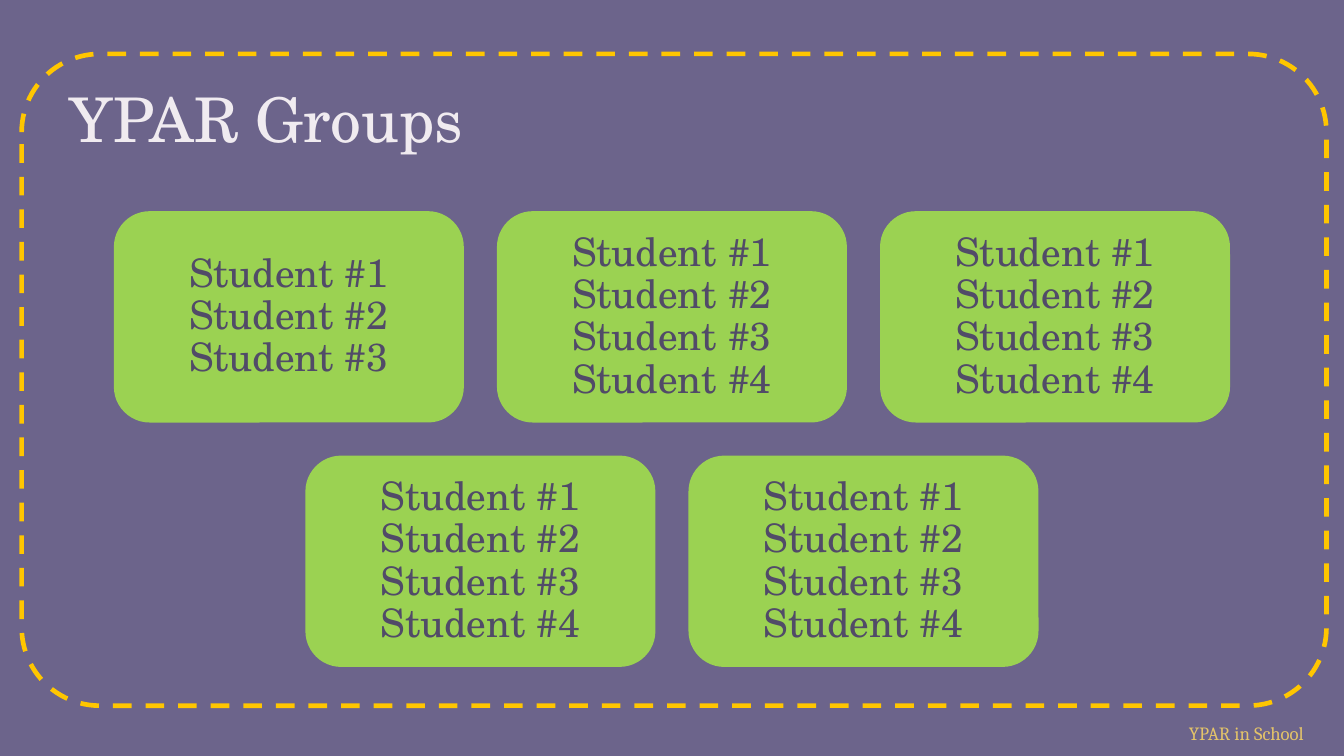
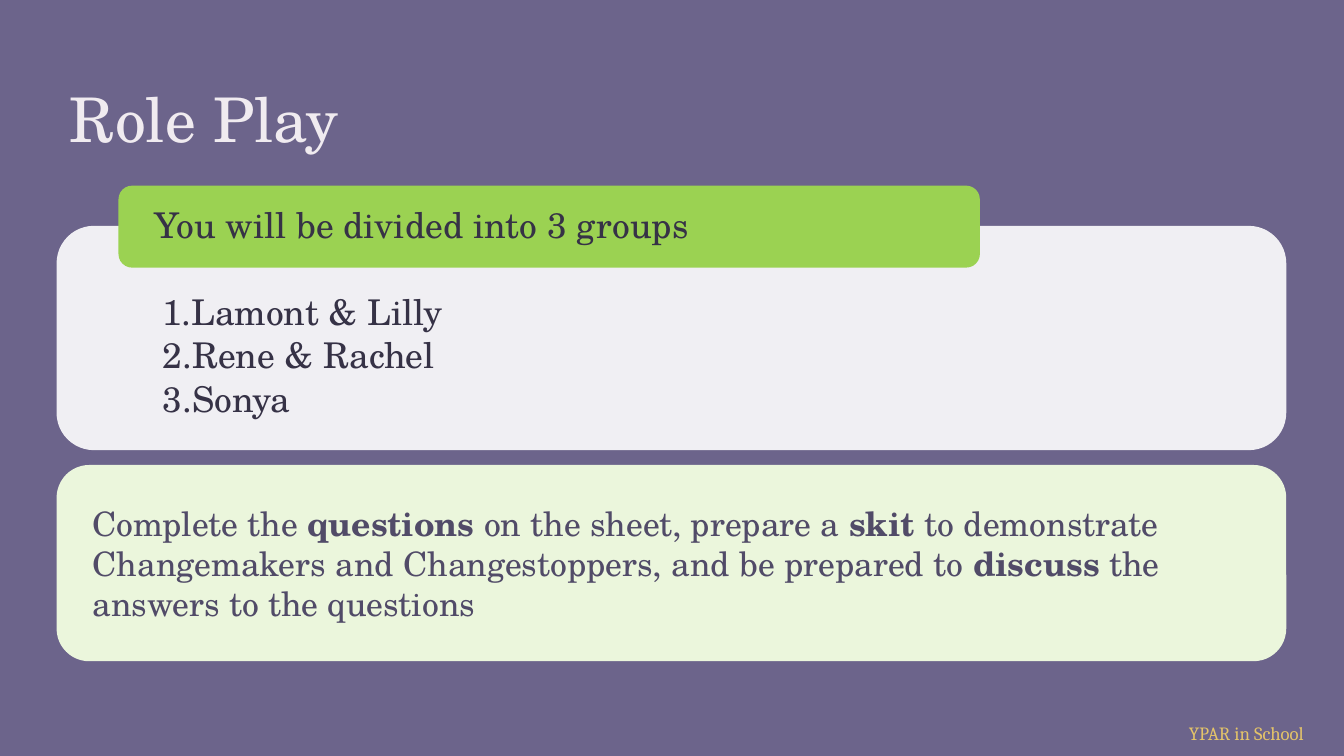
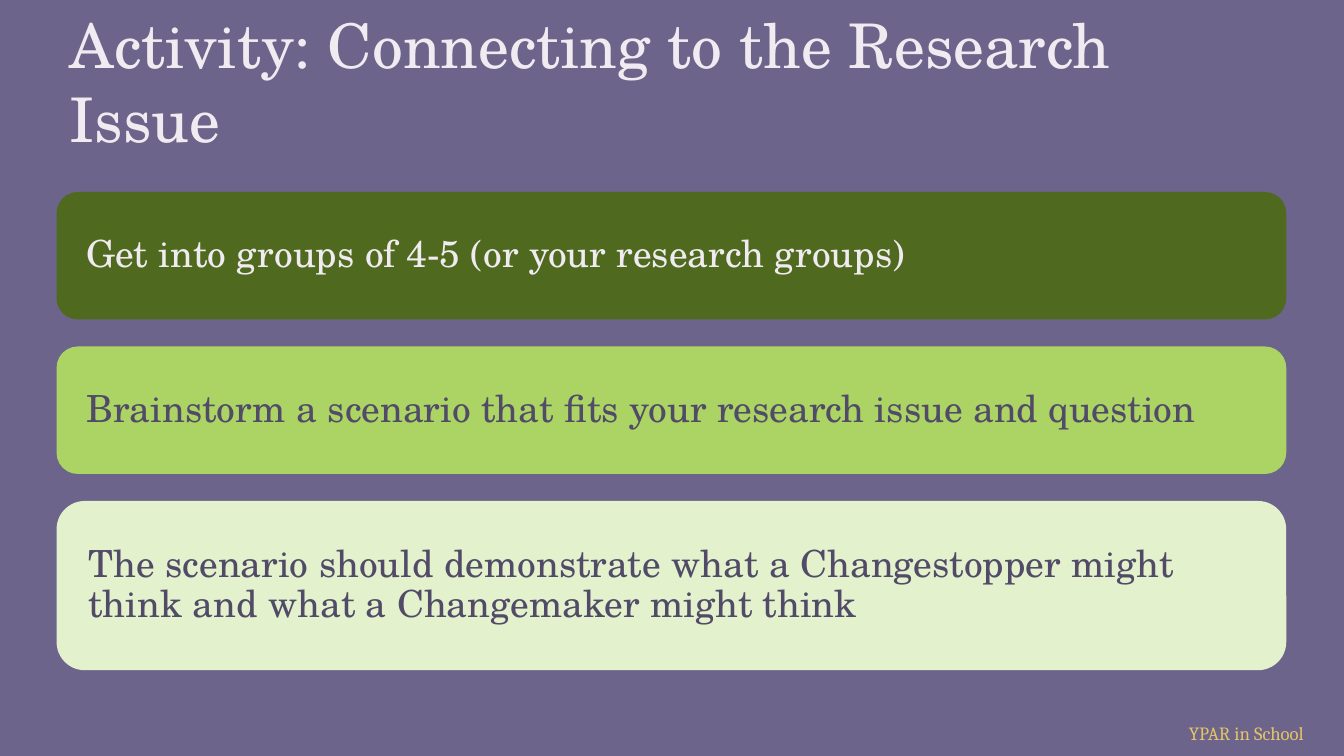
from lxml.etree import SubElement
from pptx import Presentation
from pptx.dml.color import RGBColor
from pptx.enum.dml import MSO_LINE
from pptx.enum.shapes import MSO_SHAPE
from pptx.enum.text import MSO_ANCHOR, PP_ALIGN
from pptx.oxml.ns import qn
from pptx.util import Cm, Pt

PURPLE = RGBColor(0x6C, 0x64, 0x8B)
DARK_PURPLE = RGBColor(0x51, 0x4B, 0x68)
DEEP_PURPLE = RGBColor(0x36, 0x32, 0x46)
PALE = RGBColor(0xF0, 0xEB, 0xF0)
WHITE = RGBColor(0xFF, 0xFF, 0xFF)
SAND = RGBColor(0xE4, 0xC4, 0x69)
YELLOW = RGBColor(0xFF, 0xC6, 0x00)
GREEN = RGBColor(0x9B, 0xD2, 0x52)
DARK_GREEN = RGBColor(0x4F, 0x6A, 0x1E)
MID_GREEN = RGBColor(0xAC, 0xD4, 0x65)
LIGHT_GREEN = RGBColor(0xE3, 0xF1, 0xCC)
PALE_GREEN = RGBColor(0xEB, 0xF6, 0xDC)

BODY_FONT = "TeX Gyre Schola"
FOOTER_FONT = "Cambria"

SLIDE_WIDTH, SLIDE_HEIGHT = 25.4, 14.29
CONTENT_LEFT, CONTENT_WIDTH = 1.07, 23.24
CARD_WIDTH, CARD_HEIGHT, CARD_GAP = 6.58, 3.96, 0.66
TEXT_INDENT = 0.25


def set_font(paragraph, size, color, name=BODY_FONT):
    font = paragraph.font
    font.name = name
    font.size = Pt(size)
    font.color.rgb = color


def set_frame(text_frame, margins, anchor):
    """Set wrapping, anchor and the left, top, right and bottom margins in cm."""
    text_frame.word_wrap = True
    text_frame.vertical_anchor = anchor
    (text_frame.margin_left, text_frame.margin_top,
     text_frame.margin_right, text_frame.margin_bottom) = map(Cm, margins)


def set_indent(paragraph, left, first=0):
    properties = paragraph._p.get_or_add_pPr()
    properties.set("marL", str(Cm(left)))
    properties.set("indent", str(Cm(first)))
    return properties


def add_text_box(slide, left, top, width, height, margins, anchor, text):
    box = slide.shapes.add_textbox(Cm(left), Cm(top), Cm(width), Cm(height))
    set_frame(box.text_frame, margins, anchor)
    paragraph = box.text_frame.paragraphs[0]
    paragraph.text = text
    return paragraph


def add_titled_slide(presentation, title):
    slide = presentation.slides.add_slide(presentation.slide_layouts[6])
    footer = add_text_box(slide, 22.22, 13.51, 3.18, 0.69, (0.25, 0.13, 0.25, 0.13),
                          MSO_ANCHOR.TOP, "YPAR in School")
    set_font(footer, 10, SAND, FOOTER_FONT)
    heading = add_text_box(slide, CONTENT_LEFT, 1.27, CONTENT_WIDTH, 1.9,
                           (0.25,) * 4, MSO_ANCHOR.BOTTOM, title)
    set_font(heading, 33, PALE)
    return slide


def add_rounded(slide, left, top, width, height, fill=None):
    shape = slide.shapes.add_shape(MSO_SHAPE.ROUNDED_RECTANGLE,
                                   Cm(left), Cm(top), Cm(width), Cm(height))
    shape.shadow.inherit = False
    shape.line.fill.background()
    if fill is None:
        shape.fill.background()
    else:
        shape.fill.solid()
        shape.fill.fore_color.rgb = fill
    return shape


def write_label(shape, text, size, color, margins, line_spacing=0.9,
                indent=0, alignment=PP_ALIGN.LEFT):
    """Write one vertically centred paragraph; parts between ** are bold."""
    set_frame(shape.text_frame, margins, MSO_ANCHOR.MIDDLE)
    paragraph = shape.text_frame.paragraphs[0]
    parts = text.split("**")
    if len(parts) == 1:
        paragraph.text = text
    else:
        for position, part in enumerate(parts):
            run = paragraph.add_run()
            run.text = part
            run.font.bold = position % 2 == 1
    set_indent(paragraph, indent)
    paragraph.alignment = alignment
    paragraph.line_spacing = line_spacing
    set_font(paragraph, size, color)


def write_numbered(shape, items, size, color, margins):
    set_frame(shape.text_frame, margins, MSO_ANCHOR.TOP)
    for position, item in enumerate(items):
        paragraphs = shape.text_frame
        paragraph = paragraphs.add_paragraph() if position else paragraphs.paragraphs[0]
        paragraph.text = item
        properties = set_indent(paragraph, 0.48, -0.76)
        SubElement(properties, qn("a:buAutoNum"), type="arabicPeriod")
        paragraph.alignment = PP_ALIGN.LEFT
        paragraph.line_spacing = 0.9
        paragraph.space_after = Pt(3)
        set_font(paragraph, size, color)


def set_opacity(shape, percent):
    color = shape.fill._xPr.find(qn("a:solidFill"))[0]
    SubElement(color, qn("a:alpha"), val=str(percent * 1000))


def add_card_row(slide, top, group_sizes):
    """Add a centred row of student cards, one for each group size."""
    pitch = CARD_WIDTH + CARD_GAP
    start = (SLIDE_WIDTH - len(group_sizes) * pitch + CARD_GAP) / 2
    for column, group_size in enumerate(group_sizes):
        card = add_rounded(slide, start + column * pitch, top, CARD_WIDTH, CARD_HEIGHT, GREEN)
        card.line.color.rgb = GREEN
        card.line.width = Pt(1)
        students = "\n".join(f"Student #{number}" for number in range(1, group_size + 1))
        write_label(card, students, 21, DARK_PURPLE, (0.23,) * 4, alignment=PP_ALIGN.CENTER)


def add_dashed_frame(slide):
    frame = add_rounded(slide, 0.41, 1.02, 24.66, 12.32)
    frame.adjustments[0] = 0.12
    frame.line.color.rgb = YELLOW
    frame.line.width = Pt(2.5)
    frame.line.dash_style = MSO_LINE.DASH


def build_groups(presentation):
    slide = add_titled_slide(presentation, "YPAR Groups")
    for row, group_sizes in enumerate([(3, 4, 4), (4, 4)]):
        add_card_row(slide, 4.01 + row * (CARD_HEIGHT + CARD_GAP), group_sizes)
    add_dashed_frame(slide)


def build_role_play(presentation):
    slide = add_titled_slide(presentation, "Role Play")
    panel = add_rounded(slide, CONTENT_LEFT, 4.27, CONTENT_WIDTH, 4.24, WHITE)
    set_opacity(panel, 90)
    write_numbered(panel, ["Lamont & Lilly", "Rene & Rachel", "Sonya"], 19, DEEP_PURPLE,
                   (1.8, 1.09, 1.8, 0.38))
    header = add_rounded(slide, 2.24, 3.51, 16.28, 1.55, GREEN)
    write_label(header, "You will be divided into 3 groups", 19, DEEP_PURPLE,
                (0.61, 0, 0.61, 0))
    task = add_rounded(slide, CONTENT_LEFT, 8.79, CONTENT_WIDTH, 3.71, PALE_GREEN)
    write_label(task, "Complete the **questions** on the sheet, prepare a **skit** to "
                "demonstrate Changemakers and Changestoppers, and be prepared to "
                "**discuss** the answers to the questions",
                18, DARK_PURPLE, (0.25, 0.13, 0.25, 0.13), 1.0, TEXT_INDENT)


def build_activity(presentation):
    slide = add_titled_slide(presentation, "Activity: Connecting to the Research Issue")
    steps = [
        ("Get into groups of 4-5 (or your research groups)", 2.41, DARK_GREEN, PALE),
        ("Brainstorm a scenario that fits your research issue and question",
         2.41, MID_GREEN, DARK_PURPLE),
        ("The scenario should demonstrate what a Changestopper might think "
         "and what a Changemaker might think", 3.2, LIGHT_GREEN, DARK_PURPLE),
    ]
    top = 3.63
    for text, height, fill, color in steps:
        bar = add_rounded(slide, CONTENT_LEFT, top, CONTENT_WIDTH, height, fill)
        write_label(bar, text, 20, color, (0.2,) * 4, indent=TEXT_INDENT)
        top += height + 0.51


def main():
    presentation = Presentation()
    presentation.slide_width = Cm(SLIDE_WIDTH)
    presentation.slide_height = Cm(SLIDE_HEIGHT)
    background = presentation.slide_master.background.fill
    background.solid()
    background.fore_color.rgb = PURPLE
    build_groups(presentation)
    build_role_play(presentation)
    build_activity(presentation)
    presentation.save("out.pptx")


if __name__ == "__main__":
    main()
